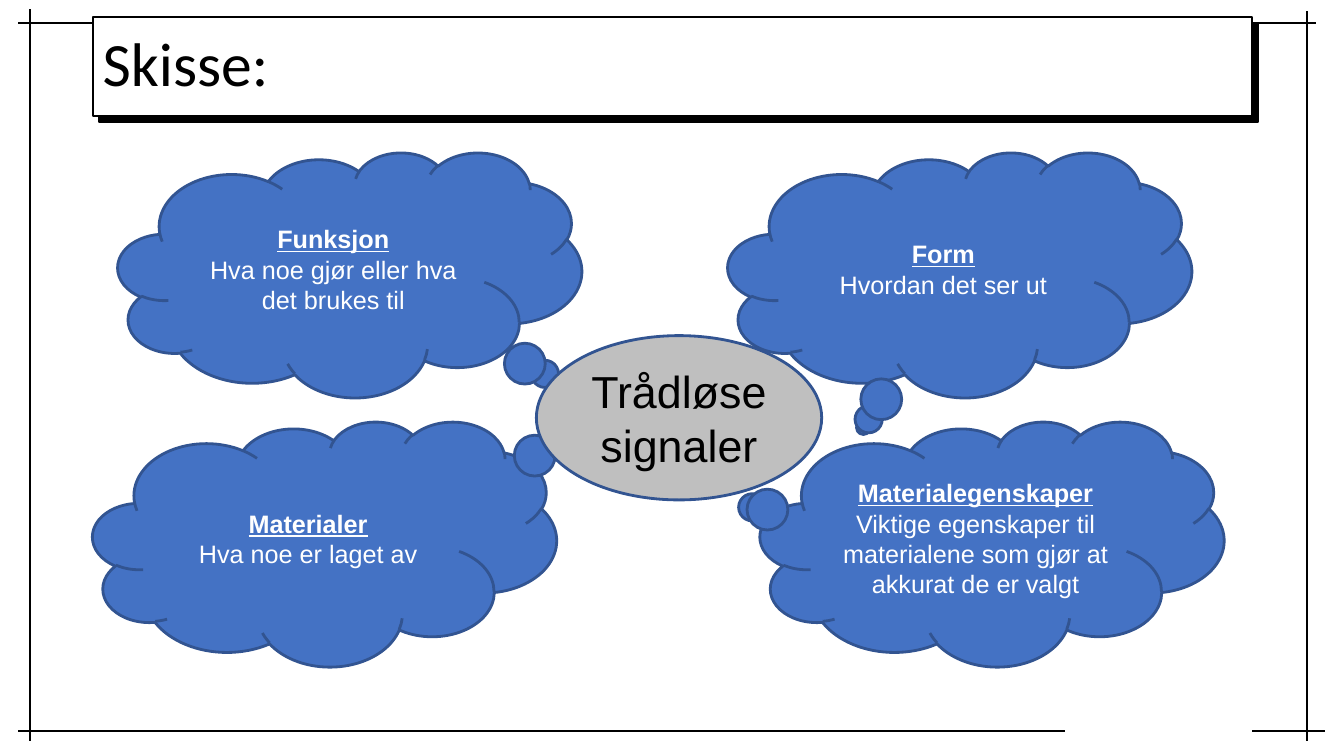
from typing import NamedTuple

from lxml.etree import SubElement
from pptx import Presentation
from pptx.dml.color import RGBColor
from pptx.enum.shapes import MSO_CONNECTOR as Link, MSO_SHAPE as Kind
from pptx.enum.text import MSO_ANCHOR as Anchor, PP_ALIGN as Align
from pptx.oxml.ns import qn
from pptx.shapes.autoshape import Shape
from pptx.slide import Slide
from pptx.text.text import _Paragraph as Para
from pptx.util import Emu, Pt

SCALE = 9144  # 100 px to the inch
COLORS = {
    "black": "000000",
    "white": "FFFFFF",
    "blue": "4472C4",
    "navy": "325491",
    "gray": "BFBFBF",
}


class Box(NamedTuple):
    left: int
    top: int
    width: int
    height: int


class Rule(NamedTuple):
    x1: int
    y1: int
    x2: int
    y2: int


class Cloud(NamedTuple):
    left: int
    top: int
    tail: tuple[float, float]
    head: str
    body: str


CLOUD_W, CLOUD_H = 460, 243
RULES = [
    Rule(18, 23, 1305, 23),
    Rule(18, 725, 1056, 725),
    Rule(30, 735, 30, 9),
    Rule(1296, 735, 1296, 11),
    Rule(1242, 725, 1314, 725),
]
CLOUDS = [
    Cloud(117, 151, (0.438, 0.422), "Funksjon",
          "Hva noe gjør eller hva det brukes til"),
    Cloud(722, 151, (-0.208, 0.625), "Form", "Hvordan det ser ut"),
    Cloud(92, 418, (0.603, -0.479), "Materialer", "Hva noe er laget av"),
    Cloud(754, 418, (-0.521, -0.15), "Materialegenskaper",
          "Viktige egenskaper til materialene som gjør at akkurat de er valgt"),
]


def px(n: int) -> Emu:
    return Emu(n * SCALE)


def color(name: str) -> RGBColor:
    return RGBColor.from_string(COLORS[name])


def add_rule(slide: Slide, rule: Rule) -> None:
    line = slide.shapes.add_connector(Link.STRAIGHT, *map(px, rule))
    line.line.color.rgb = color("black")
    line.line.width = Pt(1.5)
    SubElement(line._element.spPr, qn("a:effectLst"))


def add_box(slide: Slide, kind: Kind, box: Box, fill: str, edge: str,
            width: float) -> Shape:
    shape = slide.shapes.add_shape(kind, *map(px, box))
    shape.shadow.inherit = False
    shape.fill.solid()
    shape.fill.fore_color.rgb = color(fill)
    shape.line.color.rgb = color(edge)
    shape.line.width = Pt(width)
    shape.text_frame.word_wrap = True
    shape.text_frame.vertical_anchor = Anchor.MIDDLE
    return shape


def add_run(para: Para, text: str, size: int, ink: str, face: str = "Arial",
            strong: bool = False, align: Align = Align.CENTER) -> None:
    para.alignment = align
    run = para.add_run()
    run.text = text
    font = run.font
    font.name, font.size = face, Pt(size)
    font.color.rgb = color(ink)
    font.bold = font.underline = strong


def cast_shadow(shape: Shape) -> None:
    """Give the shape a hard black shadow, 6 pt down to the right."""
    effects = shape._element.spPr.find(qn("a:effectLst"))
    shadow = SubElement(effects, qn("a:outerShdw"), blurRad="0",
                        dist=str(Pt(6)), dir=str(45 * 60000),
                        algn="tl", rotWithShape="0")
    SubElement(shadow, qn("a:srgbClr"), val=COLORS["black"])


def add_title(slide: Slide) -> None:
    title = add_box(slide, Kind.RECTANGLE, Box(92, 17, 1150, 98),
                    "white", "black", 1.5)
    cast_shadow(title)
    para = title.text_frame.paragraphs[0]
    para.line_spacing = 0.9
    add_run(para, "Skisse:", 44, "black", "Calibri", align=Align.LEFT)


def add_cloud(slide: Slide, cloud: Cloud) -> None:
    box = Box(cloud.left, cloud.top, CLOUD_W, CLOUD_H)
    shape = add_box(slide, Kind.CLOUD_CALLOUT, box, "blue", "navy", 2)
    for i, shift in enumerate(cloud.tail):
        shape.adjustments[i] = shift
    frame = shape.text_frame
    add_run(frame.paragraphs[0], cloud.head, 18, "white", strong=True)
    add_run(frame.add_paragraph(), cloud.body, 18, "white")


def add_topic(slide: Slide) -> None:
    topic = add_box(slide, Kind.OVAL, Box(532, 333, 283, 163),
                    "gray", "navy", 2)
    add_run(topic.text_frame.paragraphs[0], "Trådløse signaler", 32, "black")


def main() -> None:
    deck = Presentation()
    deck.slide_width, deck.slide_height = px(1333), px(750)
    slide = deck.slides.add_slide(deck.slide_layouts[6])
    for rule in RULES:
        add_rule(slide, rule)
    add_title(slide)
    for cloud in CLOUDS:
        add_cloud(slide, cloud)
    add_topic(slide)
    deck.save("out.pptx")


if __name__ == "__main__":
    main()
